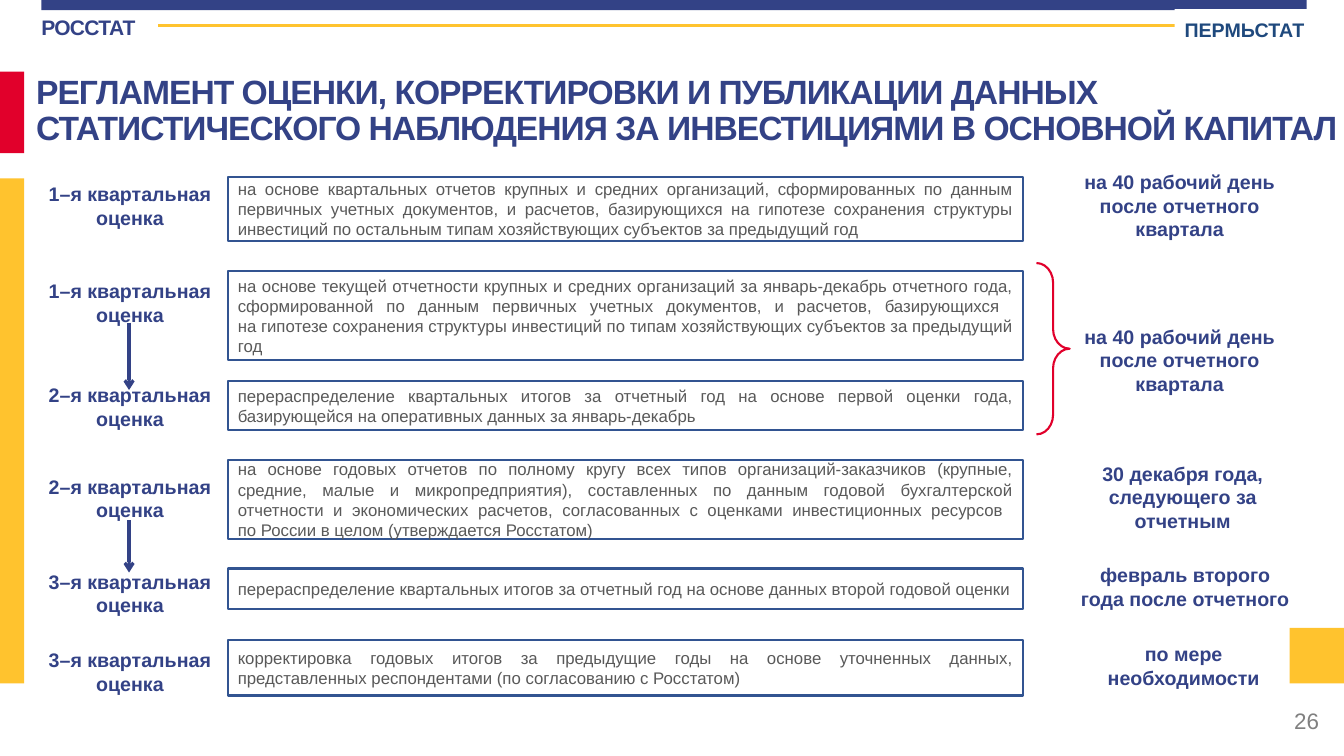
from lxml import etree
from pptx import Presentation
from pptx.dml.color import RGBColor
from pptx.enum import shapes, text
from pptx.oxml import ns
from pptx.util import Inches, Pt

COLORS = {"navy": "334286", "red": "E1002B", "yellow": "FFC32E", "border": "325491",
          "body": "595959", "number": "808080", "region": "1F497D", "white": "FFFFFF"}

TITLE = ("РЕГЛАМЕНТ ОЦЕНКИ, КОРРЕКТИРОВКИ И ПУБЛИКАЦИИ ДАННЫХ "
         "СТАТИСТИЧЕСКОГО НАБЛЮДЕНИЯ ЗА ИНВЕСТИЦИЯМИ В ОСНОВНОЙ КАПИТАЛ")

# Color, left, top, width, height
BARS = [
    ("navy", 0.41, 0, 12.55, 0.1),
    ("red", 0, 0.71, 0.24, 0.81),
    ("yellow", 0, 1.77, 0.24, 5.01),
    ("yellow", 12.79, 6.23, 0.54, 0.55),
]

# Quarter number, label top, box top, box height, description
STAGES = [
    (1, 1.76, 1.76, 0.63,
     "на основе квартальных отчетов крупных и средних организаций, сформированных по данным "
     "первичных учетных документов, и расчетов, базирующихся на гипотезе сохранения структуры "
     "инвестиций по остальным типам хозяйствующих субъектов за предыдущий год"),
    (1, 2.72, 2.69, 0.88,
     "на основе текущей отчетности крупных и средних организаций за январь-декабрь отчетного "
     "года, сформированной по данным первичных учетных документов, и расчетов, базирующихся \v"
     "на гипотезе сохранения структуры инвестиций по типам хозяйствующих субъектов за "
     "предыдущий год"),
    (2, 3.75, 3.78, 0.49,
     "перераспределение квартальных итогов за отчетный год на основе первой оценки года, "
     "базирующейся на оперативных данных за январь-декабрь"),
    (2, 4.66, 4.56, 0.79,
     "на основе годовых отчетов по полному кругу всех типов организаций-заказчиков (крупные, "
     "средние, малые и микропредприятия), составленных по данным годовой бухгалтерской "
     "отчетности и экономических расчетов, согласованных с оценками инвестиционных ресурсов \v"
     "по России в целом (утверждается Росстатом)"),
    (3, 5.6, 5.64, 0.4,
     "перераспределение квартальных итогов за отчетный год на основе данных второй годовой "
     "оценки"),
    (3, 6.38, 6.35, 0.55,
     "корректировка годовых итогов за предыдущие годы на основе уточненных данных, "
     "представленных респондентами (по согласованию с Росстатом)"),
]

# Left, top, width, height, text
WORKDAY_40 = "на 40 рабочий день после отчетного квартала"
DEADLINES = [
    (10.61, 1.64, 2.18, 0.81, WORKDAY_40),
    (10.61, 3.17, 2.18, 0.81, WORKDAY_40),
    (10.47, 4.53, 2.52, 0.81, "30 декабря года, следующего за отчетным"),
    (10.6, 5.54, 2.31, 0.57, "февраль второго года после отчетного"),
    (10.65, 6.32, 2.18, 0.57, "по мере необходимости"),
]

ARROW_X = 1.28
ARROWS = [(3.2, 3.87), (5.16, 5.68)]  # top, bottom

ALIGN = text.PP_ALIGN
ANCHOR = text.MSO_ANCHOR

presentation = Presentation()
presentation.slide_width = Inches(13.33)
presentation.slide_height = Inches(7.5)
slide = presentation.slides.add_slide(presentation.slide_layouts[6])


def rgb(name):
    return RGBColor.from_string(COLORS[name])


def add_shape(kind, place, fill=None, line=None):
    shape = slide.shapes.add_shape(kind, *map(Inches, place))
    shape.shadow.inherit = False
    if fill:
        shape.fill.solid()
        shape.fill.fore_color.rgb = rgb(fill)
    else:
        shape.fill.background()
    if line:
        shape.line.color.rgb = rgb(line)
        shape.line.width = Pt(1.5)
    else:
        shape.line.fill.background()
    return shape


def write(shape, words, size, color, bold=False, align=ALIGN.LEFT, anchor=ANCHOR.TOP, spacing=0):
    """Fill a shape with one paragraph; spacing is between letters, in points."""
    frame = shape.text_frame
    frame.word_wrap = True
    frame.vertical_anchor = anchor
    frame.text = words
    paragraph = frame.paragraphs[0]
    paragraph.alignment = align
    for run in paragraph.runs:
        run.font.name = "Arial"
        run.font.size = Pt(size)
        run.font.bold = bold
        run.font.color.rgb = rgb(color)
        if spacing:
            run._r.get_or_add_rPr().set("spc", str(round(spacing * 100)))
    return paragraph


def add_text(place, *args, **options):
    box = slide.shapes.add_textbox(*map(Inches, place))
    return box, write(box, *args, **options)


def add_line(x1, y1, x2, y2, color, width, arrow=False):
    line = slide.shapes.add_connector(shapes.MSO_CONNECTOR.STRAIGHT,
                                      *map(Inches, (x1, y1, x2, y2)))
    line.line.color.rgb = rgb(color)
    line.line.width = Pt(width)
    if arrow:
        etree.SubElement(line.line._get_or_add_ln(), ns.qn("a:tailEnd"), type="arrow")
    etree.SubElement(line._element.spPr, ns.qn("a:effectLst"))


RECTANGLE = shapes.MSO_SHAPE.RECTANGLE

for color, *place in BARS:
    add_shape(RECTANGLE, place, fill=color)

agency, _ = add_text((0.41, 0.13, 1.15, 0.32), "РОССТАТ", 15, "navy", bold=True, spacing=-0.5)
frame = agency.text_frame
frame.margin_left = frame.margin_right = frame.margin_bottom = 0
frame.margin_top = Inches(0.01)

add_line(1.57, 0.25, 12.95, 0.25, "yellow", 2)
region = add_shape(RECTANGLE, (11.65, 0.09, 1.53, 0.34), fill="white")
write(region, "ПЕРМЬСТАТ", 14, "region", bold=True).line_spacing = 1.15

_, title = add_text((0.26, 0.7, 13.15, 0.63), TITLE, 24, "navy", bold=True, spacing=-0.7)
title.line_spacing = 0.9

for quarter, label_top, box_top, box_height, description in STAGES:
    add_text((-0.19, label_top, 2.96, 0.57), f"{quarter}–я квартальная\vоценка", 14, "navy",
             bold=True, align=ALIGN.CENTER)
    box = add_shape(RECTANGLE, (2.26, box_top, 7.89, box_height), line="border")
    write(box, description, 12, "body", align=ALIGN.JUSTIFY, anchor=ANCHOR.MIDDLE)

for *place, deadline in DEADLINES:
    add_text(place, deadline, 14, "navy", bold=True, align=ALIGN.CENTER)

brace = add_shape(shapes.MSO_SHAPE.RIGHT_BRACE, (10.28, 2.61, 0.33, 1.7), line="red")
brace.adjustments[0] = 0.59
brace.adjustments[1] = 0.5

for top, bottom in ARROWS:
    add_line(ARROW_X, top, ARROW_X, bottom, "navy", 2.25, arrow=True)

add_text((10.18, 6.95, 3, 0.4), "26", 16, "number", align=ALIGN.RIGHT, anchor=ANCHOR.MIDDLE)

presentation.save("out.pptx")
